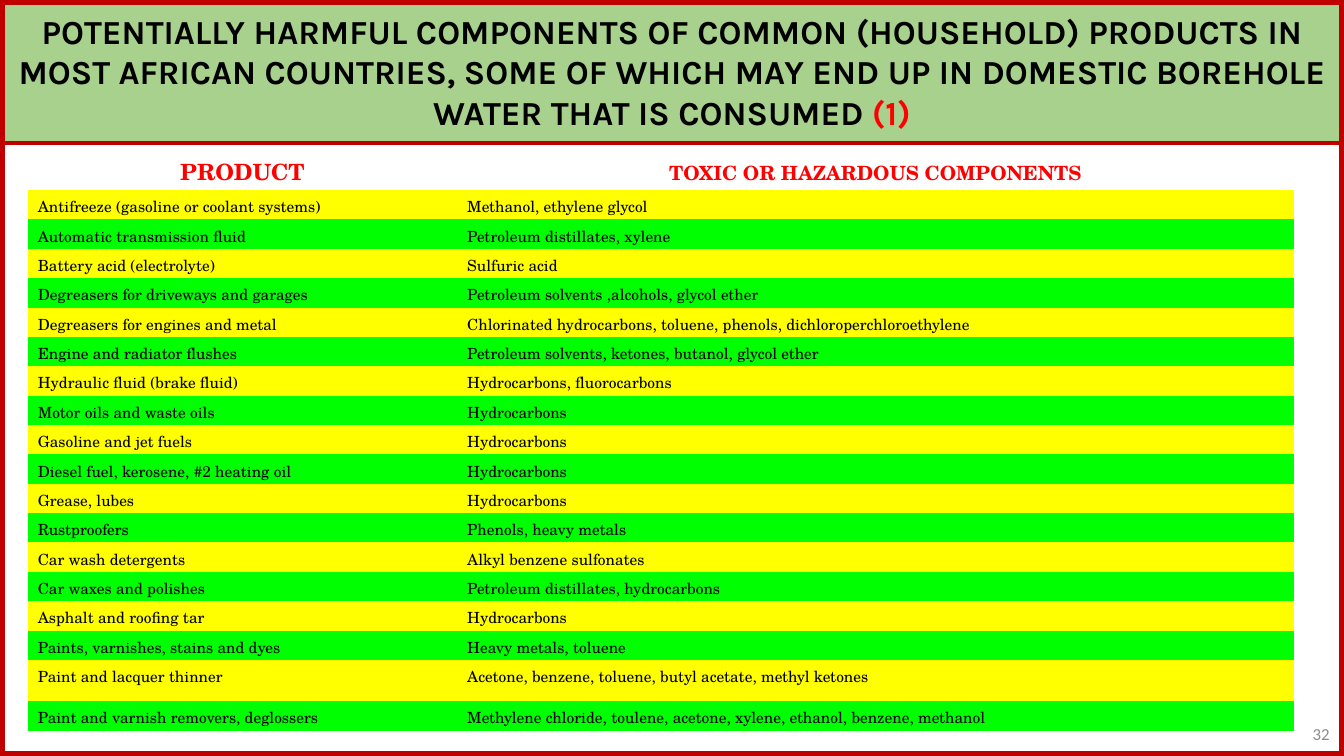
import dataclasses

import pptx
import pptx.dml.color
import pptx.enum.shapes
import pptx.enum.text
import pptx.util

Cm = pptx.util.Cm
Pt = pptx.util.Pt
ALIGN = pptx.enum.text.PP_ALIGN
MIDDLE = pptx.enum.text.MSO_ANCHOR.MIDDLE


@dataclasses.dataclass(frozen=True)
class Theme:
    """Colours, fonts and type sizes of the slide."""
    banner: str = "A9D18E"
    frame: str = "C00000"
    accent: str = "FF0000"
    ink: str = "000000"
    muted: str = "8C8C8C"
    bands: tuple = ("FFFF00", "00FF00")
    title_font: str = "Karla"
    table_font: str = "TeX Gyre Schola"
    number_font: str = "Calibri"
    title_size: int = 24
    header_sizes: tuple = (16, 14)
    body_size: int = 11
    number_size: int = 12


THEME = Theme()
WIDTH, HEIGHT = Cm(33.87), Cm(19.05)
NO_GRID_STYLE = "{2D5ABB26-0587-4C30-8999-92F81FD0307C}"
TITLE = (
    "POTENTIALLY HARMFUL COMPONENTS OF COMMON (HOUSEHOLD) PRODUCTS IN MOST "
    "AFRICAN COUNTRIES, SOME OF WHICH MAY END UP IN DOMESTIC BOREHOLE WATER "
    "THAT IS CONSUMED "
)
HEADERS = ("PRODUCT", "TOXIC OR HAZARDOUS COMPONENTS")
PRODUCTS = [
    ("Antifreeze (gasoline or coolant systems)", "Methanol, ethylene glycol"),
    ("Automatic transmission fluid", "Petroleum distillates, xylene"),
    ("Battery acid (electrolyte)", "Sulfuric acid"),
    ("Degreasers for driveways and garages", "Petroleum solvents ,alcohols, glycol ether"),
    ("Degreasers for engines and metal",
     "Chlorinated hydrocarbons, toluene, phenols, dichloroperchloroethylene"),
    ("Engine and radiator flushes", "Petroleum solvents, ketones, butanol, glycol ether"),
    ("Hydraulic fluid (brake fluid)", "Hydrocarbons, fluorocarbons"),
    ("Motor oils and waste oils", "Hydrocarbons"),
    ("Gasoline and jet fuels", "Hydrocarbons"),
    ("Diesel fuel, kerosene, #2 heating oil", "Hydrocarbons"),
    ("Grease, lubes", "Hydrocarbons"),
    ("Rustproofers", "Phenols, heavy metals"),
    ("Car wash detergents", "Alkyl benzene sulfonates"),
    ("Car waxes and polishes", "Petroleum distillates, hydrocarbons"),
    ("Asphalt and roofing tar", "Hydrocarbons"),
    ("Paints, varnishes, stains and dyes", "Heavy metals, toluene"),
    ("Paint and lacquer thinner", "Acetone, benzene, toluene, butyl acetate, methyl ketones"),
    ("Paint and varnish removers, deglossers",
     "Methylene chloride, toulene, acetone, xylene, ethanol, benzene, methanol"),
]
COLUMN_WIDTHS = (Cm(10.82), Cm(21.09))
HEADER_HEIGHT, ROW_HEIGHT, TALL_HEIGHT = Cm(0.94), Cm(0.74), Cm(1.04)
HEADER_TOPS = (Cm(0.05), Cm(0.13))
TALL_ROW = 17


def rgb(value):
    """Return a colour object for a hex string."""
    return pptx.dml.color.RGBColor.from_string(value)


def add_text(p, text, *, font, size, color, bold=False, align=ALIGN.LEFT, hanging=None):
    """Append a formatted run to a paragraph."""
    p.alignment = align
    if hanging:
        pPr = p._p.get_or_add_pPr()
        pPr.set("marL", str(hanging))
        pPr.set("indent", str(-hanging))
    r = p.add_run()
    r.text = text
    r.font.name = font
    r.font.size = Pt(size)
    r.font.bold = bold
    r.font.color.rgb = rgb(color)


def add_rect(s, height, line_width, fill=None):
    """Add a full-width framed rectangle at the top of the slide."""
    sp = s.shapes.add_shape(pptx.enum.shapes.MSO_SHAPE.RECTANGLE, 0, 0, WIDTH, height)
    sp.shadow.inherit = False
    if fill:
        sp.fill.solid()
        sp.fill.fore_color.rgb = rgb(fill)
    else:
        sp.fill.background()
    sp.line.color.rgb = rgb(THEME.frame)
    sp.line.width = Pt(line_width)
    return sp


def add_title(s):
    """Add the banner with the slide title."""
    tf = add_rect(s, Cm(3.6), 3, THEME.banner).text_frame
    tf.word_wrap = True
    tf.vertical_anchor = MIDDLE
    tf.margin_left = tf.margin_right = tf.margin_top = tf.margin_bottom = Cm(0.25)
    for text, color in ((TITLE, THEME.ink), ("(1)", THEME.accent)):
        add_text(tf.paragraphs[0], text, font=THEME.title_font, size=THEME.title_size,
                 color=color, bold=True, align=ALIGN.CENTER)


def fill_cell(cell, text, fill=None, top=Cm(0.13), **text_format):
    """Set the background, margins and text of a table cell."""
    if fill:
        cell.fill.solid()
        cell.fill.fore_color.rgb = rgb(fill)
    else:
        cell.fill.background()
    cell.margin_top, cell.margin_bottom = top, 0
    add_text(cell.text_frame.paragraphs[0], text, font=THEME.table_font,
             hanging=Cm(0.97), **text_format)


def add_product_table(s):
    """Add the table of products and their hazardous components."""
    heights = [HEADER_HEIGHT] + [ROW_HEIGHT] * len(PRODUCTS)
    heights[TALL_ROW] = TALL_HEIGHT
    frame = s.shapes.add_table(len(heights), len(HEADERS), Cm(0.7), Cm(3.85),
                               sum(COLUMN_WIDTHS), sum(heights))
    table = frame.table
    table._tbl.tblPr[0].text = NO_GRID_STYLE
    for column, width in zip(table.columns, COLUMN_WIDTHS):
        column.width = width
    for row, height in zip(table.rows, heights):
        row.height = height
    for col, (text, size, top) in enumerate(zip(HEADERS, THEME.header_sizes, HEADER_TOPS)):
        fill_cell(table.cell(0, col), text, top=top, size=size, color=THEME.accent,
                  bold=True, align=ALIGN.CENTER)
    for row, product in enumerate(PRODUCTS, start=1):
        for col, text in enumerate(product):
            fill_cell(table.cell(row, col), text, fill=THEME.bands[(row - 1) % 2],
                      size=THEME.body_size, color=THEME.ink)


def add_slide_number(s):
    """Add the slide number in the bottom right corner."""
    tf = s.shapes.add_textbox(Cm(26.14), Cm(17.98), Cm(7.62), Cm(1.02)).text_frame
    tf.word_wrap = True
    tf.vertical_anchor = MIDDLE
    add_text(tf.paragraphs[0], "32", font=THEME.number_font, size=THEME.number_size,
             color=THEME.muted, align=ALIGN.RIGHT)


def main():
    """Build and save the slide."""
    prs = pptx.Presentation()
    prs.slide_width, prs.slide_height = WIDTH, HEIGHT
    s = prs.slides.add_slide(prs.slide_layouts[6])
    add_title(s)
    add_rect(s, HEIGHT, 7)
    add_product_table(s)
    add_slide_number(s)
    prs.save("out.pptx")


if __name__ == "__main__":
    main()
